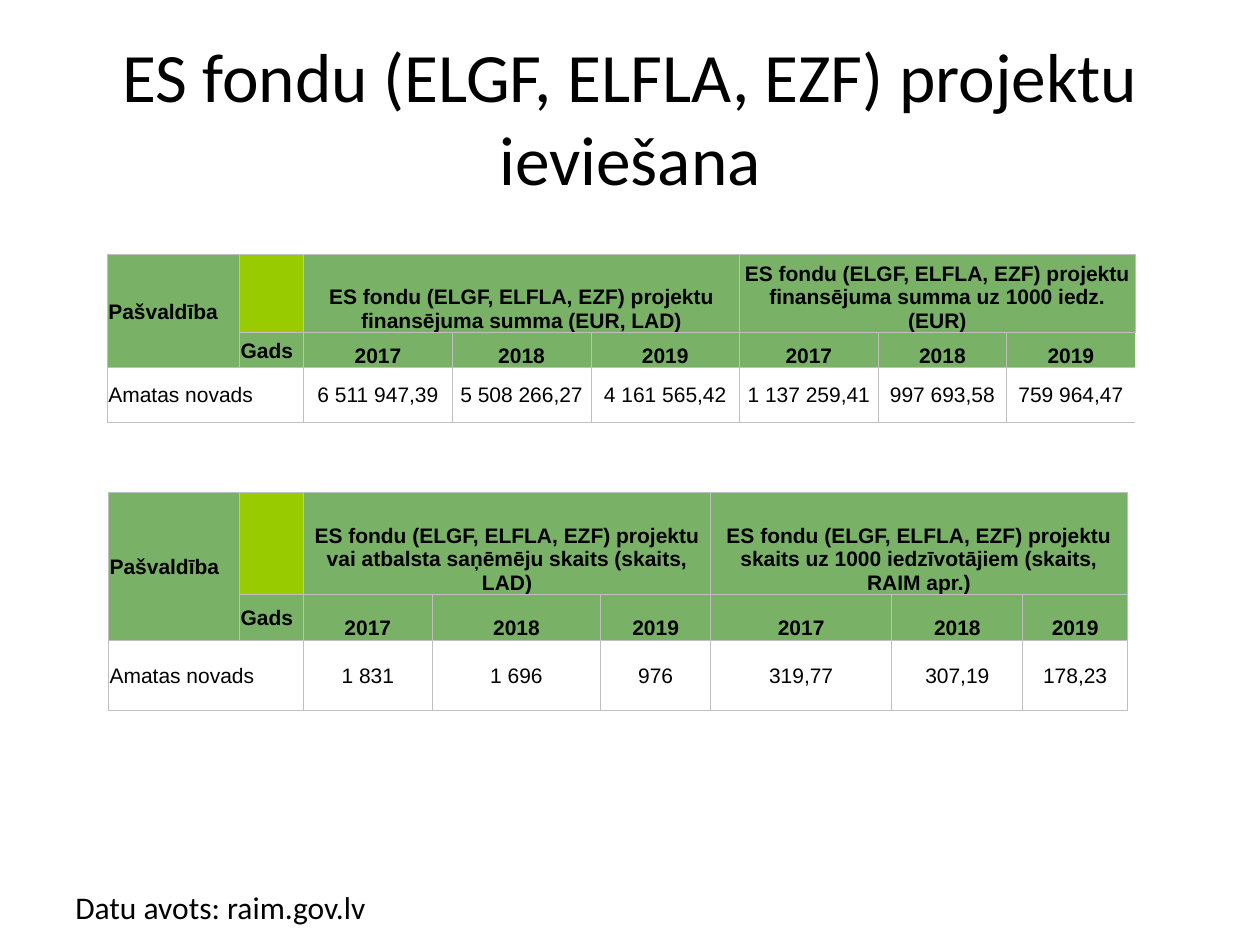
import dataclasses

import lxml.etree
import pptx
import pptx.dml.color
import pptx.enum.text
import pptx.oxml.ns
import pptx.presentation
import pptx.shapes.base
import pptx.slide
import pptx.table
import pptx.text.text
import pptx.util

Inches = pptx.util.Inches
Pt = pptx.util.Pt
Align = pptx.enum.text.PP_ALIGN
Anchor = pptx.enum.text.MSO_ANCHOR

COLORS = {
    "text": "000000",
    "header": "79B267",
    "corner": "99CC00",
    "data": "FFFFFF",
    "border": "C0C0C0",
}
YEARS = ["2017", "2018", "2019"]
FIRST_YEAR_COLUMN = 2


@dataclasses.dataclass(frozen=True)
class FundTable:
    left: float
    top: float
    columns: list[float]
    rows: list[float]
    headings: list[str]
    values: list[str]
    right_border: bool


FUND_TABLES = [
    FundTable(
        left=0.85,
        top=2.02,
        columns=[1.05, 0.51, 1.18, 1.1, 1.18, 1.1, 1.02, 1.02],
        rows=[0.62, 0.28, 0.43],
        headings=[
            "ES fondu (ELGF, ELFLA, EZF) projektu finansējuma summa (EUR, LAD)",
            "ES fondu (ELGF, ELFLA, EZF) projektu finansējuma summa uz 1000 iedz. (EUR)",
        ],
        values=["6 511 947,39", "5 508 266,27", "4 161 565,42",
                "1 137 259,41", "997 693,58", "759 964,47"],
        right_border=False,
    ),
    FundTable(
        left=0.86,
        top=3.91,
        columns=[1.04, 0.51, 1.02, 1.34, 0.87, 1.44, 1.04, 0.83],
        rows=[0.81, 0.36, 0.56],
        headings=[
            "ES fondu (ELGF, ELFLA, EZF) projektu vai atbalsta saņēmēju skaits (skaits, LAD)",
            "ES fondu (ELGF, ELFLA, EZF) projektu skaits uz 1000 iedzīvotājiem (skaits, RAIM apr.)",
        ],
        values=["1 831", "1 696", "976", "319,77", "307,19", "178,23"],
        right_border=True,
    ),
]


def rgb(name: str) -> pptx.dml.color.RGBColor:
    return pptx.dml.color.RGBColor.from_string(COLORS[name])


def style_font(para, family: str, size: float, bold: bool = False) -> None:
    para.font.name = family
    para.font.size = Pt(size)
    para.font.bold = bold
    para.font.color.rgb = rgb("text")


def place(shape, left: float, top: float, width: float, height: float) -> None:
    shape.left, shape.top = Inches(left), Inches(top)
    shape.width, shape.height = Inches(width), Inches(height)


def set_borders(cell, right_border: bool) -> None:
    qn = pptx.oxml.ns.qn
    properties = cell._tc.get_or_add_tcPr()
    for side in ("lnL", "lnR", "lnT", "lnB"):
        line = lxml.etree.SubElement(properties, qn(f"a:{side}"), w=str(Pt(0.5)))
        if side == "lnR" and not right_border:
            lxml.etree.SubElement(line, qn("a:noFill"))
        else:
            fill = lxml.etree.SubElement(line, qn("a:solidFill"))
            lxml.etree.SubElement(fill, qn("a:srgbClr"), val=COLORS["border"])


def write_cell(cell, text: str, bold: bool, align=Align.CENTER, anchor=Anchor.MIDDLE) -> None:
    cell.text = text
    cell.vertical_anchor = anchor
    para = cell.text_frame.paragraphs[0]
    para.alignment = align
    style_font(para, "Arial", 12, bold)


def add_fund_table(page: pptx.slide.Slide, data: FundTable) -> None:
    frame = page.shapes.add_table(
        len(data.rows), len(data.columns), Inches(data.left), Inches(data.top),
        Inches(sum(data.columns)), Inches(sum(data.rows)))
    table = frame.table
    for column, width in zip(table.columns, data.columns):
        column.width = Inches(width)
    for row, height in zip(table.rows, data.rows):
        row.height = Inches(height)

    last_row, last_column = len(data.rows) - 1, len(data.columns) - 1
    for row in range(len(data.rows)):
        for column in range(len(data.columns)):
            cell = table.cell(row, column)
            cell.margin_left = cell.margin_right = cell.margin_top = Inches(0.01)
            cell.margin_bottom = 0
            set_borders(cell, data.right_border or column < last_column)
            cell.fill.solid()
            cell.fill.fore_color.rgb = rgb("data" if row == last_row else "header")
    table.cell(0, 1).fill.fore_color.rgb = rgb("corner")

    table.cell(0, 0).merge(table.cell(1, 0))
    table.cell(last_row, 0).merge(table.cell(last_row, 1))
    write_cell(table.cell(0, 0), "Pašvaldība", True, Align.LEFT)
    write_cell(table.cell(1, 1), "Gads", True, Align.LEFT)
    write_cell(table.cell(last_row, 0), "Amatas novads", False, Align.LEFT)

    for group, heading in enumerate(data.headings):
        start = FIRST_YEAR_COLUMN + group * len(YEARS)
        table.cell(0, start).merge(table.cell(0, start + len(YEARS) - 1))
        write_cell(table.cell(0, start), heading, True, anchor=Anchor.BOTTOM)
        for column, year in enumerate(YEARS, start):
            write_cell(table.cell(1, column), year, True, anchor=Anchor.BOTTOM)
    for column, value in enumerate(data.values, FIRST_YEAR_COLUMN):
        write_cell(table.cell(last_row, column), value, False)


def add_title(page: pptx.slide.Slide) -> None:
    title = page.shapes.title
    place(title, 0.5, 0.3, 9, 1.25)
    title.text_frame.text = "ES fondu (ELGF, ELFLA, EZF) projektu ieviešana"
    title.text_frame.vertical_anchor = Anchor.MIDDLE
    para = title.text_frame.paragraphs[0]
    para.alignment = Align.CENTER
    style_font(para, "Calibri", 39.6)


def add_data_source(page: pptx.slide.Slide) -> None:
    box = page.shapes.add_textbox(Inches(0.5), Inches(7), Inches(2.53), Inches(0.4))
    box.text_frame.word_wrap = False
    box.text_frame.auto_size = pptx.enum.text.MSO_AUTO_SIZE.SHAPE_TO_FIT_TEXT
    box.text_frame.text = "Datu avots: raim.gov.lv"
    style_font(box.text_frame.paragraphs[0], "Calibri", 18)


def main() -> None:
    deck = pptx.Presentation()
    deck.slide_width, deck.slide_height = Inches(10), Inches(7.5)
    page = deck.slides.add_slide(deck.slide_layouts.get_by_name("Title Only"))
    add_title(page)
    add_data_source(page)
    for data in FUND_TABLES:
        add_fund_table(page, data)
    deck.save("out.pptx")


if __name__ == "__main__":
    main()
